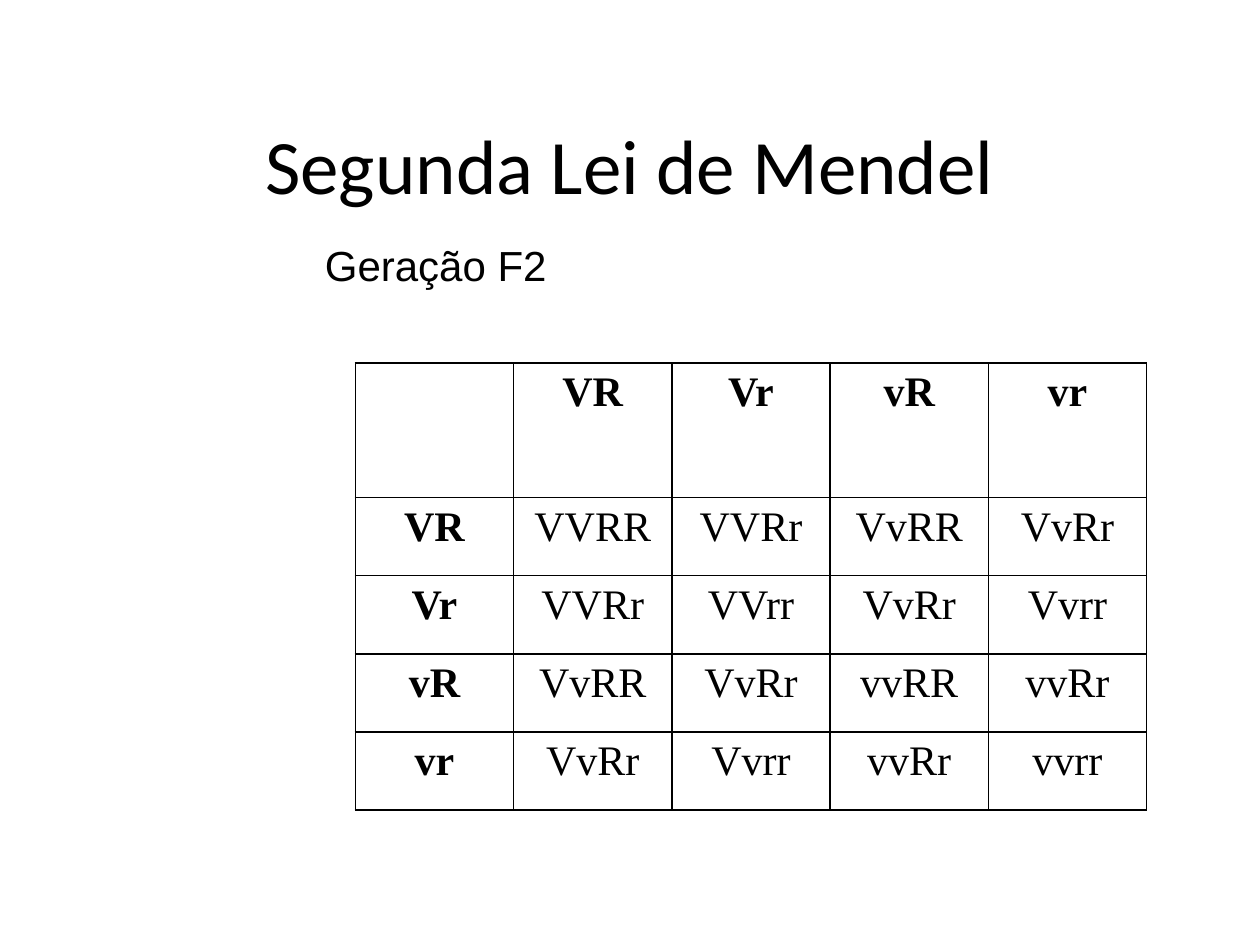
from lxml import etree
from pptx import Presentation
from pptx.dml.color import RGBColor
from pptx.enum.text import MSO_ANCHOR, PP_ALIGN
from pptx.oxml.ns import qn
from pptx.util import Inches, Pt

CENTER = PP_ALIGN.CENTER
JUSTIFY = PP_ALIGN.JUSTIFY
MIDDLE = MSO_ANCHOR.MIDDLE
COLORS = {"ink": "000000", "paper": "FFFFFF"}
FORMATS = {
    "title": {"name": "Calibri", "size": Pt(44)},
    "subtitle": {"name": "Arial", "size": Pt(24)},
    "gamete": {"name": "Times New Roman", "size": Pt(24), "bold": True},
    "genotype": {"name": "Times New Roman", "size": Pt(24), "bold": False},
}
GAMETES = ["VR", "Vr", "vR", "vr"]


def cross(first, second):
    return "".join("".join(sorted(pair)) for pair in zip(first, second))


class SlideBuilder:
    def __init__(self, deck):
        self.slide = deck.slides.add_slide(deck.slide_layouts[6])
        fill = self.slide.background.fill
        fill.solid()
        fill.fore_color.rgb = RGBColor.from_string(COLORS["paper"])

    def add_span(self, frame, text, style, align):
        para = frame.paragraphs[0]
        para.alignment = align
        span = para.add_run()
        span.text = text
        for key, value in FORMATS[style].items():
            setattr(span.font, key, value)
        span.font.color.rgb = RGBColor.from_string(COLORS["ink"])

    def add_text(self, bounds, text, style, align):
        box = self.slide.shapes.add_textbox(*map(Inches, bounds))
        box.text_frame.word_wrap = True
        box.text_frame.vertical_anchor = MIDDLE
        self.add_span(box.text_frame, text, style, align)

    def add_borders(self, cell):
        properties = cell._tc.get_or_add_tcPr()
        for position, side in enumerate(("lnL", "lnR", "lnT", "lnB")):
            line = etree.Element(qn(f"a:{side}"), w=str(Pt(1)))
            fill = etree.SubElement(line, qn("a:solidFill"))
            etree.SubElement(fill, qn("a:srgbClr"), val=COLORS["ink"])
            properties.insert(position, line)

    def add_table(self, bounds, rows, heights):
        frame = self.slide.shapes.add_table(
            len(rows), len(rows[0]), *map(Inches, bounds)
        )
        table = frame.table
        for column in table.columns:
            column.width = Inches(bounds[2] / len(rows[0]))
        for row, height in zip(table.rows, heights):
            row.height = Inches(height)
        for row_index, values in enumerate(rows):
            for column_index, value in enumerate(values):
                cell = table.cell(row_index, column_index)
                cell.fill.background()
                self.add_borders(cell)
                if value:
                    heading = row_index == 0 or column_index == 0
                    style = "gamete" if heading else "genotype"
                    self.add_span(cell.text_frame, value, style, CENTER)


def main():
    deck = Presentation()
    deck.slide_width, deck.slide_height = Inches(10), Inches(7.5)
    page = SlideBuilder(deck)
    page.add_text((0.75, 0.67, 8.5, 1.25), "Segunda Lei de Mendel", "title", CENTER)
    page.add_text((2.48, 1.85, 2.05, 0.5), "Geração F2", "subtitle", JUSTIFY)
    rows = [["", *GAMETES]]
    for gamete in GAMETES:
        rows.append([gamete, *(cross(gamete, other) for other in GAMETES)])
    page.add_table((2.82, 2.88, 6.28, 3.55), rows, [1.07] + [0.62] * len(GAMETES))
    deck.save("out.pptx")


if __name__ == "__main__":
    main()
